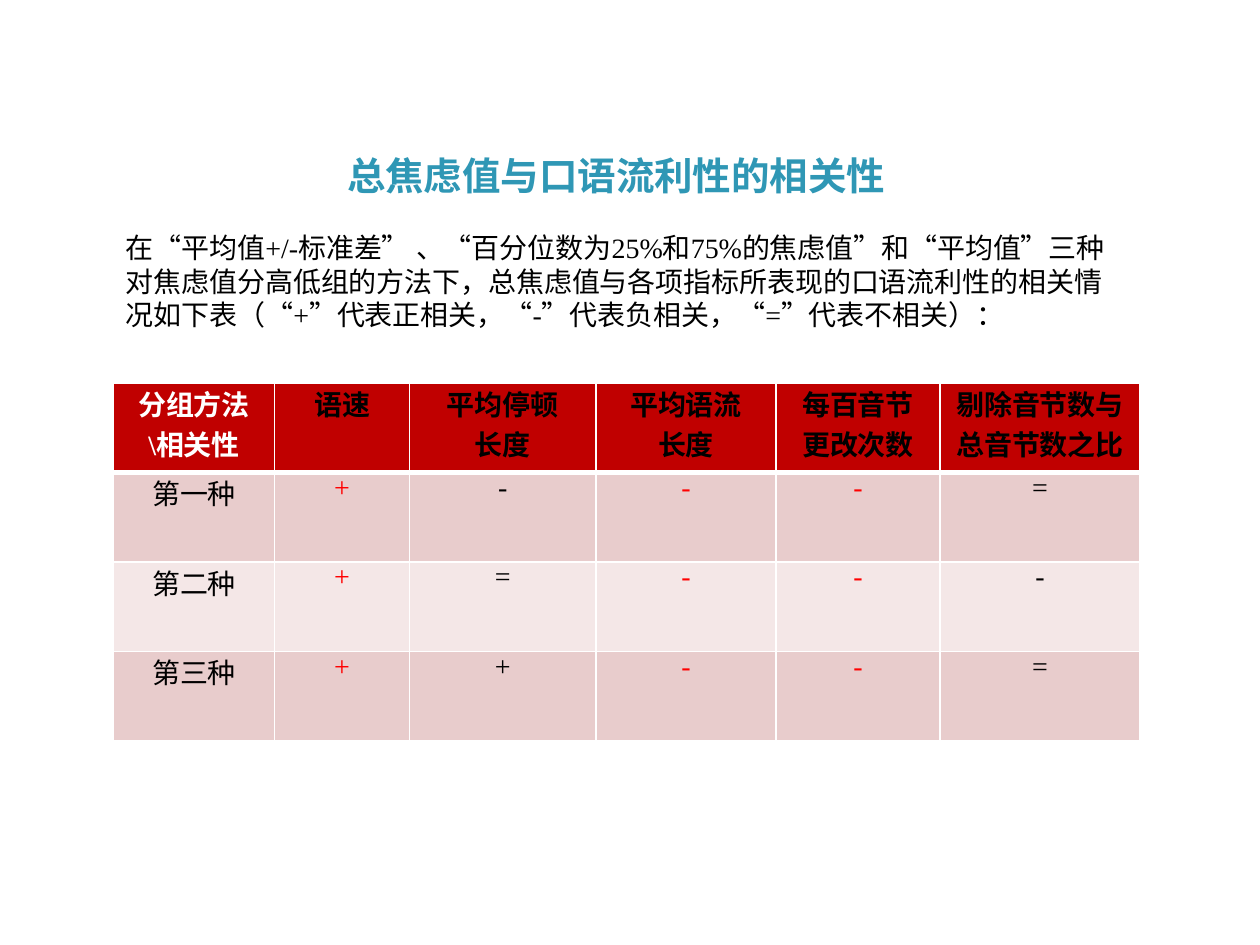
"""Build a slide with a table relating total anxiety to spoken fluency."""
from lxml import etree
from pptx import Presentation
from pptx.dml.color import RGBColor
from pptx.enum.text import MSO_ANCHOR, PP_ALIGN
from pptx.oxml.ns import qn
from pptx.util import Inches, Pt

CENTER, LEFT = PP_ALIGN.CENTER, PP_ALIGN.LEFT
TOP, BOTTOM = MSO_ANCHOR.TOP, MSO_ANCHOR.BOTTOM
WHITE = RGBColor(0xFF, 0xFF, 0xFF)
BLACK = RGBColor(0x00, 0x00, 0x00)
RED = RGBColor(0xFF, 0x00, 0x00)
TEAL = RGBColor(0x2F, 0x97, 0xB5)
HEADER_FILL = RGBColor(0xC0, 0x00, 0x00)
BAND_FILLS = [RGBColor(0xE8, 0xCC, 0xCC), RGBColor(0xF4, 0xE7, 0xE7)]

TITLE = "总焦虑值与口语流利性的相关性"
INTRO = (
    "在“平均值+/-标准差” 、“百分位数为25%和75%的焦虑值”和“平均值”三"
    "种对焦虑值分高低组的方法下，总焦虑值与各项指标所表现的口语流利性的相关"
    "情况如下表（“+”代表正相关，“-”代表负相关，“=”代表不相关）："
)
ROWS = [
    ["分组方法\\相关性", "语速", "平均停顿\n长度", "平均语流\n长度",
     "每百音节\n更改次数", "剔除音节数与总音节数之比"],
    ["第一种", "+", "-", "-", "-", "="],
    ["第二种", "+", "=", "-", "-", "-"],
    ["第三种", "+", "+", "-", "-", "="],
]
COLUMN_WIDTHS = [1.28, 1.07, 1.48, 1.43, 1.3, 1.59]
ROW_HEIGHT = 0.71
RED_COLUMNS = (1, 3, 4)


def write_text(text_frame, text, alignment, line_spacing, font_format):
    text_frame.text = text
    for paragraph in text_frame.paragraphs:
        paragraph.alignment = alignment
        paragraph.line_spacing = line_spacing
        for run in paragraph.runs:
            run.font.color.rgb = font_format["color"]
            for name in ("name", "size", "bold"):
                setattr(run.font, name, font_format[name])


def add_border(cell, side, points):
    line = etree.SubElement(cell._tc.get_or_add_tcPr(), qn(f"a:{side}"), w=str(Pt(points)))
    fill = etree.SubElement(line, qn("a:solidFill"))
    etree.SubElement(fill, qn("a:srgbClr"), val=str(WHITE))


presentation = Presentation()
presentation.slide_width = Inches(10)
presentation.slide_height = Inches(7.5)
slide = presentation.slides.add_slide(presentation.slide_layouts[6])

title_format = {"name": "Arial", "size": Pt(22), "bold": True, "color": TEAL}
intro_format = {"name": "Times New Roman", "size": Pt(16), "bold": False, "color": BLACK}
text_boxes = [
    (TITLE, (0.24, 0.37, 9.3, 1.25), BOTTOM, CENTER, Pt(26.4), title_format),
    (INTRO, (0.9, 1.78, 8.15, 1.18), TOP, LEFT, Pt(19.2), intro_format),
]
for text, box, anchor, alignment, line_spacing, font_format in text_boxes:
    text_frame = slide.shapes.add_textbox(*map(Inches, box)).text_frame
    text_frame.word_wrap = True
    text_frame.vertical_anchor = anchor
    write_text(text_frame, text, alignment, line_spacing, font_format)

table = slide.shapes.add_table(
    len(ROWS), len(COLUMN_WIDTHS), Inches(0.9), Inches(3.04),
    Inches(sum(COLUMN_WIDTHS)), Inches(ROW_HEIGHT * len(ROWS)),
).table
for column, width in zip(table.columns, COLUMN_WIDTHS):
    column.width = Inches(width)

cell_format = {
    "margin_left": Inches(0.07), "margin_right": Inches(0.07),
    "margin_top": 0, "margin_bottom": 0, "vertical_anchor": TOP,
}
for row_index, row in enumerate(ROWS):
    table.rows[row_index].height = Inches(ROW_HEIGHT)
    is_header = row_index == 0
    for column_index, text in enumerate(row):
        cell = table.cell(row_index, column_index)
        for name, value in cell_format.items():
            setattr(cell, name, value)
        if is_header:
            color = WHITE if column_index == 0 else BLACK
        else:
            color = RED if column_index in RED_COLUMNS else BLACK
        line_spacing = Pt(23) if is_header or column_index == 0 else None
        write_text(cell.text_frame, text, CENTER, line_spacing,
                   intro_format | {"bold": is_header, "color": color})
        for side in ("lnL", "lnR", "lnT", "lnB"):
            below_header = (row_index, side) in ((0, "lnB"), (1, "lnT"))
            add_border(cell, side, 3 if below_header else 1)
        cell.fill.solid()
        cell.fill.fore_color.rgb = HEADER_FILL if is_header else BAND_FILLS[(row_index - 1) % 2]

presentation.save("out.pptx")
